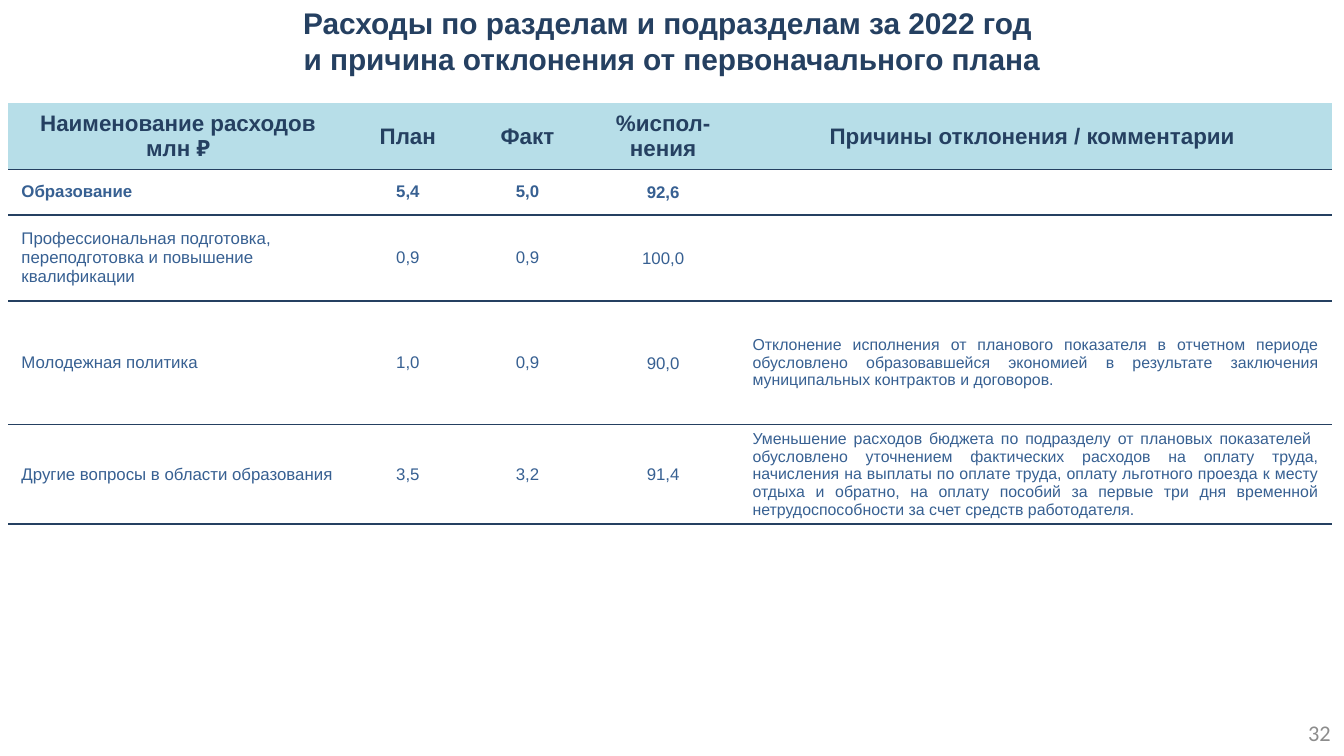
from dataclasses import dataclass

from lxml.etree import SubElement
from pptx import Presentation
from pptx.dml.color import RGBColor
from pptx.enum.text import MSO_ANCHOR as Anchor, MSO_AUTO_SIZE as AutoSize, PP_ALIGN as Align
from pptx.oxml.ns import qn
from pptx.util import Inches, Pt


@dataclass(frozen=True)
class Theme:
    navy: str = "254061"
    blue: str = "376092"
    header_fill: str = "B7DEE8"
    grey: str = "8C8C8C"
    font: str = "Arial"
    number_font: str = "Calibri"
    title_size: float = 16
    header_size: float = 12
    body_size: float = 9
    comment_size: float = 8.5


THEME = Theme()
PLAIN_TABLE_STYLE = "{2D5ABB26-0587-4C30-8999-92F81FD0307C}"
TITLE = ["Расходы по разделам и подразделам за 2022 год ",
         "и причина отклонения от первоначального плана"]
COLUMN_WIDTHS = [2.53, 0.89, 0.89, 1.13, 4.41]
ROW_HEIGHTS = [0.49, 0.34, 0.64, 0.92, 0.34]
ROWS = [
    ["Наименование расходов млн ₽", "План", "Факт", "%испол-нения",
     "Причины отклонения / комментарии "],
    ["Образование", "5,4", "5,0", "92,6", ""],
    ["Профессиональная подготовка, переподготовка и повышение квалификации",
     "0,9", "0,9", "100,0", ""],
    ["Молодежная политика", "1,0", "0,9", "90,0",
     "Отклонение исполнения от планового показателя в отчетном периоде обусловлено "
     "образовавшейся экономией в результате заключения муниципальных контрактов и договоров."],
    ["Другие вопросы в области образования", "3,5", "3,2", "91,4",
     "Уменьшение расходов бюджета по подразделу от плановых показателей  обусловлено "
     "уточнением фактических расходов на оплату труда, начисления на выплаты по оплате "
     "труда, оплату льготного проезда к месту отдыха и обратно, на оплату пособий за "
     "первые три дня временной нетрудоспособности за счет средств работодателя."],
]
PERCENT, COMMENT = 3, 4
BODY_ALIGNS = [Align.LEFT, Align.CENTER, Align.CENTER, Align.CENTER, Align.JUSTIFY]


def style_paragraph(paragraph, size, color, align, bold=False, font=THEME.font):
    paragraph.alignment = align
    paragraph.font.name = font
    paragraph.font.size = Pt(size)
    paragraph.font.bold = bold
    paragraph.font.color.rgb = RGBColor.from_string(color)


def add_border(cell, side, color, width=1):
    properties = cell._tc.get_or_add_tcPr()
    line = SubElement(properties, qn(f"a:ln{side}"), w=str(Pt(width)))
    fill = SubElement(line, qn("a:solidFill"))
    SubElement(fill, qn("a:srgbClr"), val=color)


def fill_cell(cell, text, row, column):
    is_header = row == 0
    cell.text = text
    cell.vertical_anchor = Anchor.MIDDLE
    # Percentages and empty cells have almost no inner margin
    if not is_header and (column == PERCENT or not text):
        cell.margin_left = cell.margin_right = cell.margin_top = Inches(0.01)
        cell.margin_bottom = 0
    else:
        cell.margin_left = cell.margin_right = Inches(0.1)
        cell.margin_top = cell.margin_bottom = Inches(0.04)

    paragraph = cell.text_frame.paragraphs[0]
    if is_header:
        style_paragraph(paragraph, THEME.header_size, THEME.navy, Align.CENTER, bold=True)
    else:
        size = THEME.comment_size if column == COMMENT else THEME.body_size
        style_paragraph(paragraph, size, THEME.blue, BODY_ALIGNS[column], bold=row == 1)

    # Borders precede the fill in the cell properties
    if not is_header:
        add_border(cell, "T", THEME.navy)
    add_border(cell, "B", THEME.navy)
    if is_header:
        cell.fill.solid()
        cell.fill.fore_color.rgb = RGBColor.from_string(THEME.header_fill)
    else:
        cell.fill.background()


def set_title(slide):
    title = slide.shapes.title
    title.left, title.top, title.width, title.height = 0, 0, Inches(10), Inches(0.61)
    frame = title.text_frame
    frame.auto_size = AutoSize.NONE
    frame.vertical_anchor = Anchor.MIDDLE
    frame.text = "\n".join(TITLE)
    for paragraph in frame.paragraphs:
        style_paragraph(paragraph, THEME.title_size, THEME.navy, Align.CENTER, bold=True)


def add_expense_table(slide):
    frame = slide.shapes.add_table(
        len(ROWS), len(COLUMN_WIDTHS), Inches(0.06), Inches(0.77),
        Inches(sum(COLUMN_WIDTHS)), Inches(sum(ROW_HEIGHTS)))
    table = frame.table
    table.horz_banding = False
    table._tbl.tblPr.find(qn("a:tableStyleId")).text = PLAIN_TABLE_STYLE
    for column, width in zip(table.columns, COLUMN_WIDTHS):
        column.width = Inches(width)
    for row, height in zip(table.rows, ROW_HEIGHTS):
        row.height = Inches(height)
    for row, texts in enumerate(ROWS):
        for column, text in enumerate(texts):
            fill_cell(table.cell(row, column), text, row, column)


def add_page_number(slide, number):
    box = slide.shapes.add_textbox(Inches(7.67), Inches(5.3), Inches(2.33), Inches(0.3))
    frame = box.text_frame
    frame.word_wrap = True
    frame.vertical_anchor = Anchor.MIDDLE
    frame.text = number
    style_paragraph(frame.paragraphs[0], THEME.header_size, THEME.grey, Align.RIGHT,
                    font=THEME.number_font)


def main():
    presentation = Presentation()
    # Widescreen, 16:9
    presentation.slide_width = Inches(10)
    presentation.slide_height = Inches(10 * 9 / 16)
    title_only = presentation.slide_layouts[5]
    slide = presentation.slides.add_slide(title_only)

    # Heading, expenses, footer
    set_title(slide)
    add_expense_table(slide)
    add_page_number(slide, "32")
    presentation.save("out.pptx")


if __name__ == "__main__":
    main()
